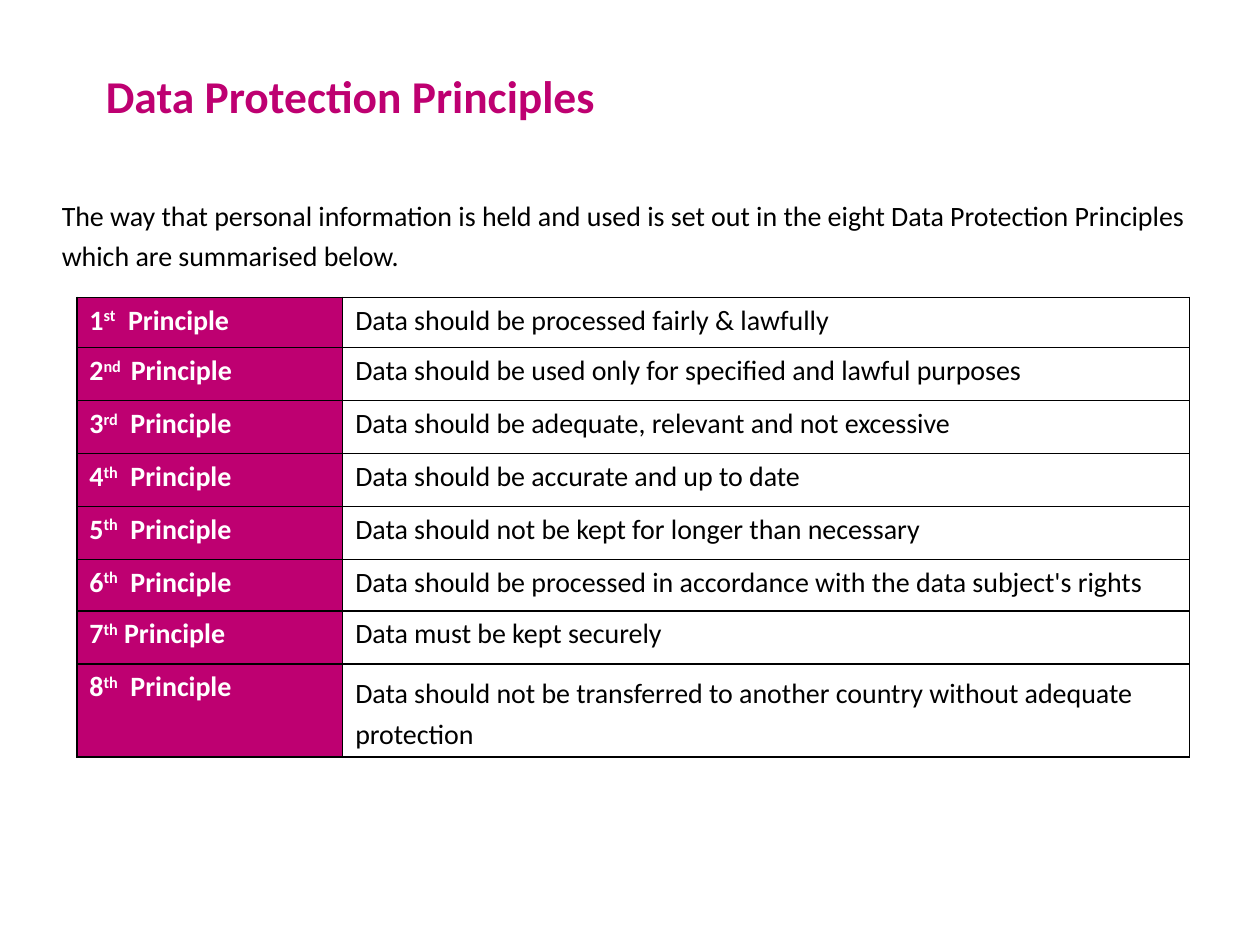
from lxml import etree
from pptx import Presentation
from pptx.dml.color import RGBColor
from pptx.oxml.ns import qn
from pptx.util import Inches, Pt

FONT = "Calibri"
MAGENTA, BLACK, WHITE = "BE0071", "000000", "FFFFFF"
TITLE = "Data Protection Principles"
INTRO = ("The way that personal information is held and used is set out in the eight "
         "Data Protection Principles which are summarised below.")
PRINCIPLES = [
    ("1", "st", "  Principle", "Data should be processed fairly & lawfully"),
    ("2", "nd ", " Principle", "Data should be used only for specified and lawful purposes"),
    ("3", "rd", "  Principle", "Data should be adequate, relevant and not excessive"),
    ("4", "th", "  Principle", "Data should be accurate and up to date"),
    ("5", "th", "  Principle", "Data should not be kept for longer than necessary"),
    ("6", "th", "  Principle",
     "Data should be processed in accordance with the data subject's rights"),
    ("7", "th", " Principle", "Data must be kept securely"),
    ("8", "th", "  Principle",
     "Data should not be transferred to another country without adequate protection"),
]
COLUMN_WIDTHS = (2.11, 6.72)
ROW_HEIGHTS = [0.4] + [0.42] * 4 + [0.41, 0.42, 0.74]


def color(value):
    return RGBColor.from_string(value)


def style(paragraph, size, value, bold=False):
    font = paragraph.font
    font.name, font.size, font.bold = FONT, Pt(size), bold
    font.color.rgb = color(value)


def add_text(page, text, area, size, value, bold=False):
    box = page.shapes.add_textbox(*map(Inches, area))
    frame = box.text_frame
    frame.word_wrap = True
    frame.margin_left = frame.margin_right = frame.margin_top = frame.margin_bottom = 0
    frame.text = text
    style(frame.paragraphs[0], size, value, bold)
    return frame.paragraphs[0]


def add_borders(cell):
    properties = cell._tc.get_or_add_tcPr()
    for index, side in enumerate(("a:lnL", "a:lnR", "a:lnT", "a:lnB")):
        line = etree.Element(qn(side), w=str(Pt(1)))
        fill = etree.SubElement(line, qn("a:solidFill"))
        etree.SubElement(fill, qn("a:srgbClr"), val=BLACK)
        properties.insert(index, line)


def add_principles(page):
    area = (0.61, 2.36, sum(COLUMN_WIDTHS), sum(ROW_HEIGHTS))
    frame = page.shapes.add_table(len(PRINCIPLES), len(COLUMN_WIDTHS), *map(Inches, area))
    table = frame.table
    table.first_row = table.horz_banding = False
    for column, width in zip(table.columns, COLUMN_WIDTHS):
        column.width = Inches(width)
    for row, height, (number, suffix, word, rule) in zip(table.rows, ROW_HEIGHTS, PRINCIPLES):
        row.height = Inches(height)
        label, detail = row.cells
        label.fill.solid()
        label.fill.fore_color.rgb = color(MAGENTA)
        detail.fill.background()
        paragraph = label.text_frame.paragraphs[0]
        for text in (number, suffix, word):
            span = paragraph.add_run()
            span.text = text
            if text == suffix:
                span.font._element.set("baseline", "30000")
        style(paragraph, 16, WHITE, True)
        detail.text = rule
        style(detail.text_frame.paragraphs[0], 16, BLACK)
        for cell in (label, detail):
            add_borders(cell)
    detail.text_frame.paragraphs[0].line_spacing = 1.2


def main():
    """Build the data protection principles slide."""
    deck = Presentation()
    deck.slide_width, deck.slide_height = Inches(10), Inches(7.5)
    page = deck.slides.add_slide(deck.slide_layouts[6])
    add_text(page, TITLE, (0.84, 0.54, 5.34, 0.4), 26, MAGENTA, True)
    add_text(page, INTRO, (0.49, 1.52, 9.39, 0.78), 16, BLACK).line_spacing = 1.2
    add_principles(page)
    deck.save("out.pptx")


if __name__ == "__main__":
    main()
